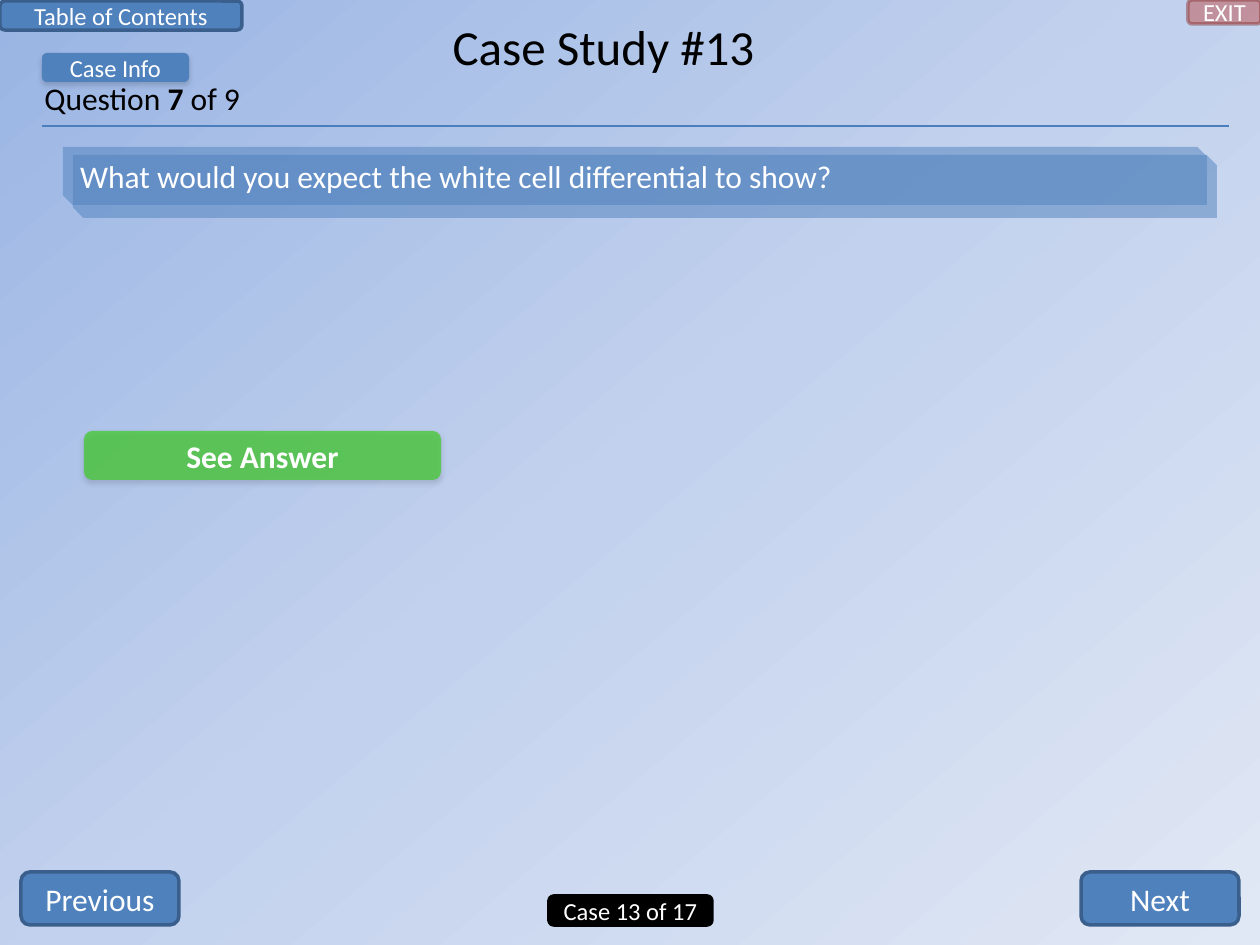
from copy import deepcopy
from dataclasses import dataclass

from lxml import etree
from pptx import Presentation
from pptx.dml.color import RGBColor
from pptx.enum.shapes import MSO_CONNECTOR, MSO_SHAPE
from pptx.enum.text import MSO_ANCHOR, PP_ALIGN
from pptx.oxml import parse_xml
from pptx.oxml.ns import nsdecls, qn
from pptx.util import Emu, Pt

ROUND = MSO_SHAPE.ROUNDED_RECTANGLE
SNIP = MSO_SHAPE.SNIP_2_DIAG_RECTANGLE
STRAIGHT = MSO_CONNECTOR.STRAIGHT
LEFT, CENTER = PP_ALIGN.LEFT, PP_ALIGN.CENTER
TOP, MIDDLE = MSO_ANCHOR.TOP, MSO_ANCHOR.MIDDLE
PX = 914400 / 126


@dataclass(frozen=True)
class Theme:
    font: str = "Calibri"
    small: int = 14
    body: int = 18
    title: int = 28
    blue: str = "4F81BD"
    blue_edge: str = "3A5F8C"
    rule: str = "4B7EBC"
    red: str = "C0504D"
    red_edge: str = "8E3B39"
    green: str = "48C937"
    black: str = "000000"
    white: str = "FFFFFF"
    background: tuple = ((0, "9AB5E4"), (0.5, "C2D1ED"), (1, "E1E8F5"))


T = Theme()
SHADOW = (
    f'<a:effectLst {nsdecls("a")}><a:outerShdw blurRad="{Pt(3.1)}" dist="{Pt(1.8)}"'
    f' dir="5400000" rotWithShape="0"><a:srgbClr val="{T.black}">'
    '<a:alpha val="16000"/></a:srgbClr></a:outerShdw></a:effectLst>'
)


def write(tf, parts, size, color, align=LEFT, anchor=TOP):
    """Fill a text frame with one paragraph of (text, bold) runs."""
    tf.vertical_anchor = anchor
    p = tf.paragraphs[0]
    p.alignment = align
    for text, bold in parts:
        r = p.add_run()
        r.text = text
        r.font.name, r.font.size, r.font.bold = T.font, Pt(size), bold
        r.font.color.rgb = RGBColor.from_string(color)


def add_box(kind, box, fill, edge=None, alpha=100):
    """Add a preset shape; alpha is the opacity of fill and edge in percent."""
    sp = s.shapes.add_shape(kind, *(Emu(round(v * PX)) for v in box))
    sp.shadow.inherit = False
    sp.fill.solid()
    sp.fill.fore_color.rgb = RGBColor.from_string(fill)
    if edge:
        sp.line.color.rgb = RGBColor.from_string(edge)
        sp.line.width = Pt(2)
    else:
        sp.line.fill.background()
    if alpha < 100:
        for clr in sp.element.spPr.iter(qn("a:srgbClr")):
            etree.SubElement(clr, qn("a:alpha")).set("val", str(alpha * 1000))
    return sp


prs = Presentation()
prs.slide_width, prs.slide_height = Emu(round(1260 * PX)), Emu(round(945 * PX))
s = prs.slides.add_slide(prs.slide_layouts[5])

# Background gradient
fill = s.background.fill
fill.gradient()
fill.gradient_angle = 310
stops = s.element.find(".//" + qn("a:gsLst"))
stops.append(deepcopy(stops[-1]))
for stop, (position, color) in zip(fill.gradient_stops, T.background):
    stop.position = position
    stop.color.rgb = RGBColor.from_string(color)

# Heading
title = s.shapes.title
title.left, title.top, title.width, title.height = (
    Emu(round(v * PX)) for v in (325, 10, 557, 72))
write(title.text_frame, [("Case Study #13", False)], T.title, T.black, CENTER)

counter = s.shapes.add_textbox(*(Emu(round(v * PX)) for v in (32, 73, 223, 89)))
write(counter.text_frame, [("Question ", False), ("7 ", True), ("of 9", False)],
      T.body, T.black)

rule = s.shapes.add_connector(
    STRAIGHT, *(Emu(round(v * PX)) for v in (42, 126, 1229, 126)))
rule.line.color.rgb = RGBColor.from_string(T.rule)
rule.line.width = Pt(1.25)
etree.SubElement(rule.element.spPr, qn("a:effectLst"))

# Question banner: two overlapping translucent panels
add_box(SNIP, (73, 155, 1144, 63), T.blue, alpha=50)
question = add_box(SNIP, (63, 147, 1144, 58), T.blue, alpha=50)
write(question.text_frame,
      [("What would you expect the white cell differential to show?", False)],
      T.body, T.white, LEFT, MIDDLE)

# Buttons: text, box, size, fill, edge, opacity, bold, shadow
buttons = [
    ("Previous", (21, 872, 158, 53), T.body, T.blue, T.blue_edge, 100, False, False),
    ("Next", (1081, 872, 158, 53), T.body, T.blue, T.blue_edge, 100, False, False),
    ("EXIT", (1188, 0, 73, 24), T.small, T.red, T.red_edge, 50, False, False),
    ("Case 13 of 17", (549, 896, 163, 29), T.small, T.black, T.black, 100, False, False),
    ("Case Info", (42, 53, 147, 29), T.small, T.blue, None, 100, False, True),
    ("See Answer", (84, 431, 357, 49), T.body, T.green, None, 78, True, True),
    ("Table of Contents", (0, 1, 242, 29), T.small, T.blue, T.blue_edge, 100, False, False),
]
for text, box, size, color, edge, alpha, bold, shadow in buttons:
    sp = add_box(ROUND, box, color, edge, alpha)
    tf = sp.text_frame
    tf.margin_left = tf.margin_right = tf.margin_top = tf.margin_bottom = 0
    write(tf, [(text, bold)], size, T.white, CENTER, MIDDLE)
    if shadow:
        spPr = sp.element.spPr
        spPr.replace(spPr.find(qn("a:effectLst")), parse_xml(SHADOW))

prs.save("out.pptx")
